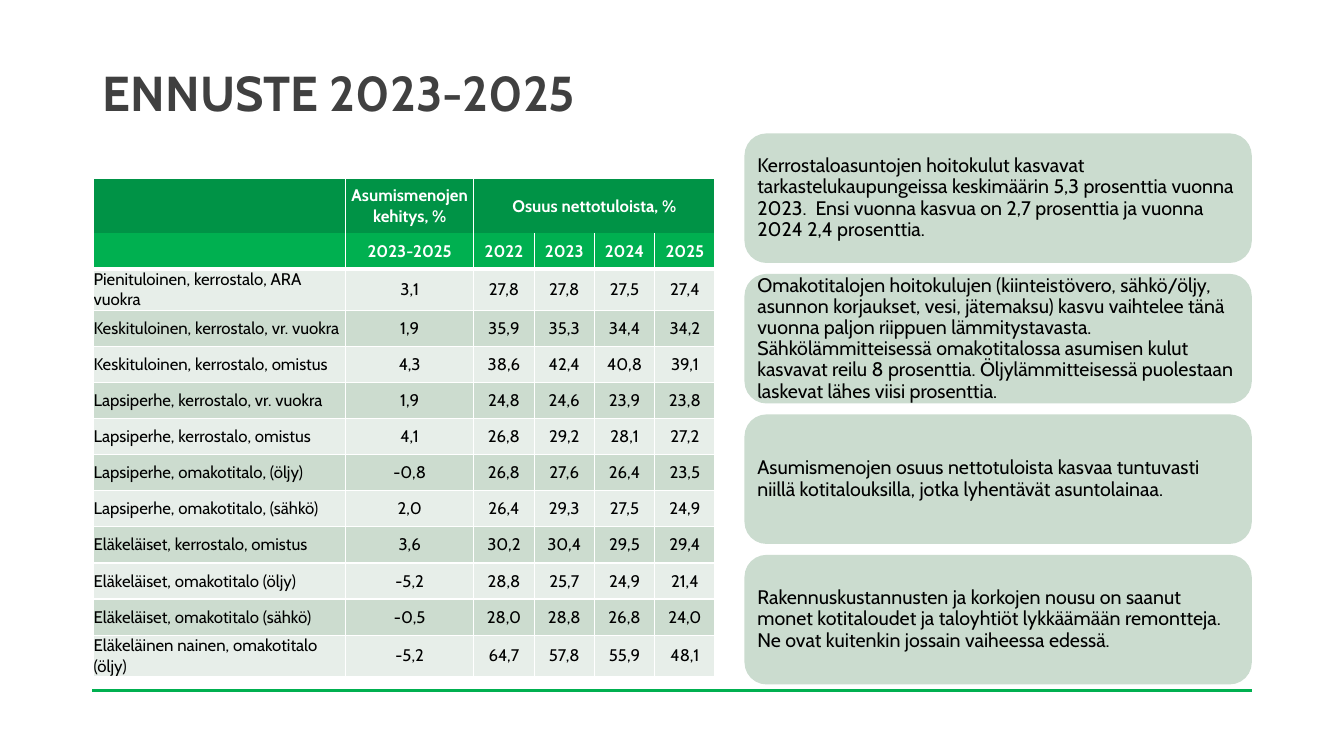
from lxml import etree
from pptx import Presentation
from pptx.dml.color import RGBColor
from pptx.enum.shapes import MSO_CONNECTOR, MSO_SHAPE
from pptx.enum.text import MSO_ANCHOR, MSO_AUTO_SIZE, PP_ALIGN
from pptx.oxml.ns import qn
from pptx.util import Cm, Pt

LEFT, CENTER = PP_ALIGN.LEFT, PP_ALIGN.CENTER
MIDDLE = MSO_ANCHOR.MIDDLE
NO_FIT = MSO_AUTO_SIZE.NONE
ROUNDED = MSO_SHAPE.ROUNDED_RECTANGLE
STRAIGHT = MSO_CONNECTOR.STRAIGHT
TITLE_ONLY = 5

WHITE, BLACK, GRAPHITE = "FFFFFF", "000000", "404040"
DARK_GREEN, GREEN, CARD_GREEN = "009346", "00B050", "CBDCCF"
BANDS = ("E7EEE9", "CCDCCF")

COLUMN_WIDTHS = [6.35, 3.23] + [1.52] * 4
HEADER_HEIGHT, ROW_HEIGHT = 1.35, 0.91
HEADERS = [
    ["", "Asumismenojen kehitys, %", "Osuus nettotuloista, %", "", "", ""],
    ["", "2023-2025", "2022", "2023", "2024", "2025"],
]
HOUSEHOLDS = [
    ["Pienituloinen, kerrostalo, ARA vuokra", "3,1", "27,8", "27,8", "27,5", "27,4"],
    ["Keskituloinen, kerrostalo, vr. vuokra", "1,9", "35,9", "35,3", "34,4", "34,2"],
    ["Keskituloinen, kerrostalo, omistus", "4,3", "38,6", "42,4", "40,8", "39,1"],
    ["Lapsiperhe, kerrostalo, vr. vuokra", "1,9", "24,8", "24,6", "23,9", "23,8"],
    ["Lapsiperhe, kerrostalo, omistus", "4,1", "26,8", "29,2", "28,1", "27,2"],
    ["Lapsiperhe, omakotitalo, (öljy)", "-0,8", "26,8", "27,6", "26,4", "23,5"],
    ["Lapsiperhe, omakotitalo, (sähkö)", "2,0", "26,4", "29,3", "27,5", "24,9"],
    ["Eläkeläiset, kerrostalo, omistus", "3,6", "30,2", "30,4", "29,5", "29,4"],
    ["Eläkeläiset, omakotitalo (öljy)", "-5,2", "28,8", "25,7", "24,9", "21,4"],
    ["Eläkeläiset, omakotitalo (sähkö)", "-0,5", "28,0", "28,8", "26,8", "24,0"],
    ["Eläkeläinen nainen, omakotitalo (öljy)", "-5,2", "64,7", "57,8", "55,9", "48,1"],
]

CARD_TOP, CARD_STEP = 3.38, 3.54
CARDS = [
    "Kerrostaloasuntojen hoitokulut kasvavat tarkastelukaupungeissa keskimäärin "
    "5,3 prosenttia vuonna 2023.  Ensi vuonna kasvua on 2,7 prosenttia ja vuonna "
    "2024 2,4 prosenttia.",
    "Omakotitalojen hoitokulujen (kiinteistövero, sähkö/öljy, asunnon korjaukset, "
    "vesi, jätemaksu) kasvu vaihtelee tänä vuonna paljon riippuen lämmitystavasta. "
    "Sähkölämmitteisessä omakotitalossa asumisen kulut kasvavat reilu 8 prosenttia. "
    "Öljylämmitteisessä puolestaan laskevat lähes viisi prosenttia.",
    "Asumismenojen osuus nettotuloista kasvaa tuntuvasti niillä kotitalouksilla, "
    "jotka lyhentävät asuntolainaa.",
    "Rakennuskustannusten ja korkojen nousu on saanut monet kotitaloudet ja "
    "taloyhtiöt lykkäämään remontteja. Ne ovat kuitenkin jossain vaiheessa edessä.",
]


def rgb(value):
    return RGBColor.from_string(value)


def assign(target, values):
    for name, value in values.items():
        setattr(target, name, value)


class Page:
    """Holds the text style and the current slide."""

    def __init__(self, slide, font="Cabin"):
        self.slide = slide
        self.shapes = slide.shapes
        self.font = font

    def add_text(self, frame, text, size, color, bold=False, align=LEFT, spacing=None):
        paragraph = frame.paragraphs[0]
        assign(paragraph, {"alignment": align, "line_spacing": spacing})
        span = paragraph.add_run()
        span.text = text
        assign(span.font, {"name": self.font, "size": Pt(size), "bold": bold})
        span.font.color.rgb = rgb(color)

    def title(self, text, left, top, width, height):
        box = self.shapes.title
        assign(box, {"left": Cm(left), "top": Cm(top),
                     "width": Cm(width), "height": Cm(height)})
        assign(box.text_frame, {"word_wrap": True, "auto_size": NO_FIT,
                                "vertical_anchor": MIDDLE})
        self.add_text(box.text_frame, text, 35, GRAPHITE, bold=True, spacing=0.9)

    def rule(self, left, right, y):
        line = self.shapes.add_connector(STRAIGHT, Cm(left), Cm(y), Cm(right), Cm(y))
        line.line.color.rgb = rgb(GREEN)
        line.line.width = Pt(1.5)
        etree.SubElement(line._element.spPr, qn("a:effectLst"))

    def card(self, text, left, top, width, height):
        box = self.shapes.add_shape(ROUNDED, Cm(left), Cm(top), Cm(width), Cm(height))
        box.shadow.inherit = False
        box.fill.solid()
        box.fill.fore_color.rgb = rgb(CARD_GREEN)
        box.line.color.rgb = rgb(CARD_GREEN)
        box.line.width = Pt(1)
        inset = Cm(0.15)
        assign(box.text_frame, {"word_wrap": True, "vertical_anchor": MIDDLE,
                                "margin_left": inset, "margin_right": inset,
                                "margin_top": inset, "margin_bottom": inset})
        self.add_text(box.text_frame, text, 14, BLACK, spacing=0.9)

    def border(self, cell, side, points):
        line = etree.SubElement(cell._tc.get_or_add_tcPr(), qn("a:ln" + side),
                                w=str(Pt(points)))
        if points:
            fill = etree.SubElement(line, qn("a:solidFill"))
            etree.SubElement(fill, qn("a:srgbClr"), val=WHITE)
        else:
            etree.SubElement(line, qn("a:noFill"))

    def cell(self, cell, text, fill, borders, **style):
        assign(cell, {"margin_left": 0, "margin_right": 0, "margin_top": 0,
                      "margin_bottom": 0, "vertical_anchor": MIDDLE})
        for side, points in borders.items():
            self.border(cell, side, points)
        cell.fill.solid()
        cell.fill.fore_color.rgb = rgb(fill)
        if text:
            self.add_text(cell.text_frame, text, 12, **style)

    def table(self, left, top):
        rows = HEADERS + HOUSEHOLDS
        heights = [HEADER_HEIGHT] + [ROW_HEIGHT] * (len(rows) - 1)
        frame = self.shapes.add_table(
            len(rows), len(COLUMN_WIDTHS), Cm(left), Cm(top),
            Cm(sum(COLUMN_WIDTHS)), Cm(sum(heights)))
        table = frame.table
        assign(table, {"first_row": False, "horz_banding": False})
        for column, width in zip(table.columns, COLUMN_WIDTHS):
            column.width = Cm(width)
        for row, height in zip(table.rows, heights):
            row.height = Cm(height)
        table.cell(0, 2).merge(table.cell(0, 5))

        # Line weight above each row: none inside the header, heavy below it
        above = [0, 0, 3] + [1] * (len(rows) - 2)
        for r, values in enumerate(rows):
            header = r < len(HEADERS)
            fill = (DARK_GREEN, GREEN)[r] if header else BANDS[r % 2]
            borders = {"L": 1, "R": 1, "T": above[r], "B": above[r + 1]}
            for c, text in enumerate(values):
                self.cell(table.cell(r, c), text, fill, borders,
                          color=WHITE if header else BLACK, bold=header,
                          align=CENTER if header or c else LEFT)


def main():
    deck = Presentation()
    assign(deck, {"slide_width": Cm(33.87), "slide_height": Cm(19.05)})
    page = Page(deck.slides.add_slide(deck.slide_layouts[TITLE_ONLY]))

    # Heading and bottom rule
    page.title("ENNUSTE 2023-2025", 2.34, 1.02, 29.21, 2.79)
    page.rule(2.32, 31.55, 17.4)

    # Housing cost table
    page.table(2.36, 4.52)

    # Key findings
    for index, text in enumerate(CARDS):
        page.card(text, 18.78, CARD_TOP + index * CARD_STEP, 12.75, 3.23)

    deck.save("out.pptx")


if __name__ == "__main__":
    main()
